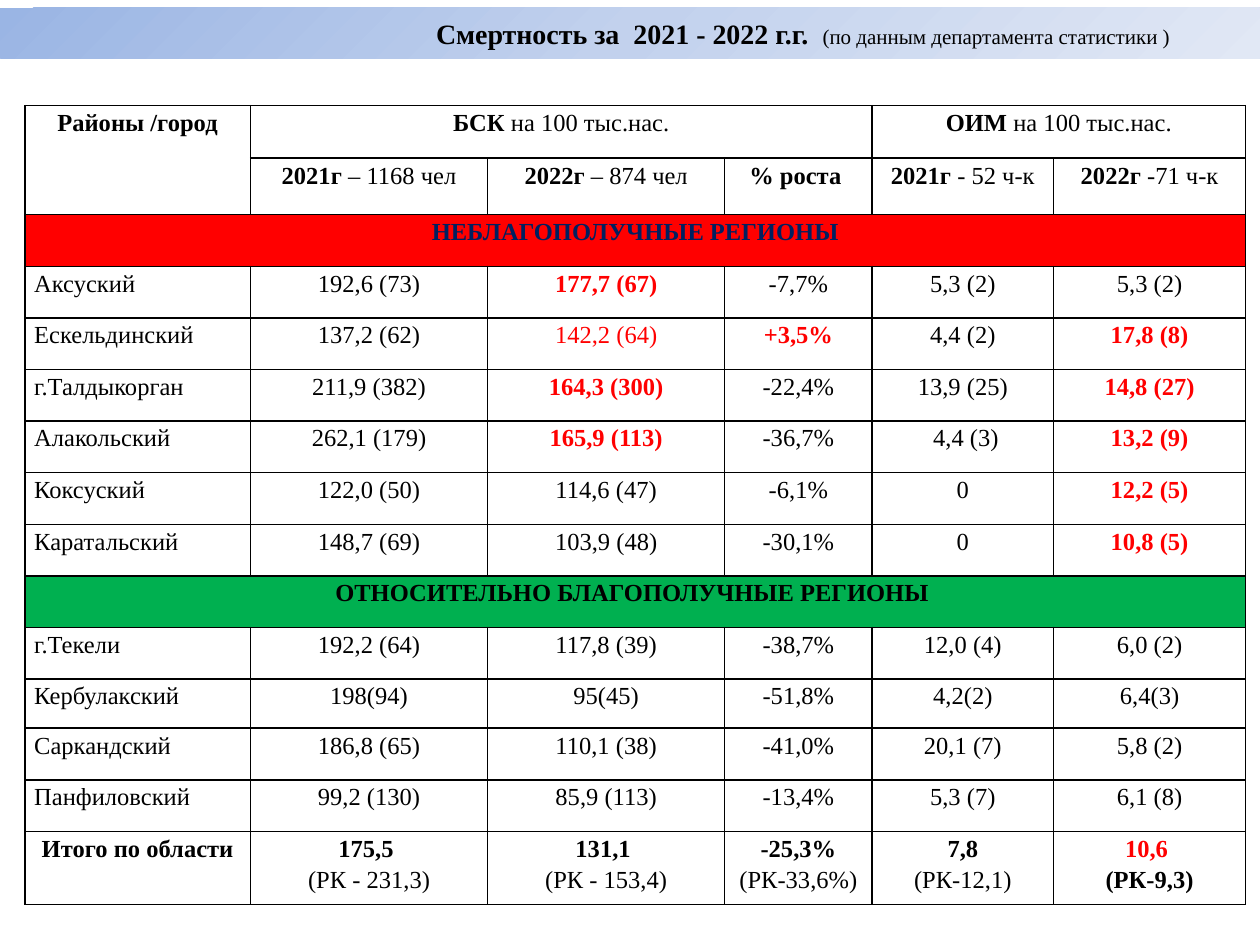
from copy import deepcopy

from lxml.etree import SubElement
from pptx import Presentation
from pptx.dml.color import RGBColor
from pptx.enum.text import MSO_ANCHOR as Anchor, MSO_AUTO_SIZE as AutoSize, PP_ALIGN as Align
from pptx.oxml.ns import qn
from pptx.util import Cm, Pt

BLACK = RGBColor(0x00, 0x00, 0x00)
RED = RGBColor(0xFF, 0x00, 0x00)
GREEN = RGBColor(0x00, 0xB0, 0x50)
NAVY = RGBColor(0x00, 0x20, 0x60)
BANNER = [RGBColor(0x9A, 0xB5, 0xE4), RGBColor(0xC2, 0xD1, 0xED), RGBColor(0xE1, 0xE8, 0xF5)]

COLUMNS = [4.55, 4.78, 4.78, 2.97, 3.66, 3.87]
ROW_HEIGHT = 1.04
SPECIAL_HEIGHTS = {0: 1.06, 1: 1.14, 11: 0.99, 14: 1.47}
MERGES = [(0, 0, 1, 0), (0, 1, 0, 3), (0, 4, 0, 5), (2, 0, 2, 5), (9, 0, 9, 5)]
BANDS = {2: (RED, NAVY), 9: (GREEN, BLACK)}
HEADER_ROWS = 2
TOTAL_ROW = 14

MORTALITY = [
    ["*Районы /город*", "*БСК *на 100 тыс.нас.", "", "", "*ОИМ *на 100 тыс.нас.", ""],
    ["", "*2021г *– 1168 чел", "*2022г *– 874 чел", "*% роста *", "*2021г *- 52 ч-к", "*2022г *-71 ч-к"],
    ["*НЕБЛАГОПОЛУЧНЫЕ РЕГИОНЫ*", "", "", "", "", ""],
    ["Аксуский", "192,6 (73)", "!*177,7 (67)*", "-7,7%", "5,3 (2)", "5,3 (2)"],
    ["Ескельдинский", "137,2 (62)", "!142,2 (64)", "!*+3,5%*", "4,4 (2)", "!*17,8 (8)*"],
    ["г.Талдыкорган", "211,9 (382)", "!*164,3 (300)*", "-22,4%", "13,9 (25)", "!*14,8 (27)*"],
    ["Алакольский", "262,1 (179)", "!*165,9 (113)*", "-36,7%", " 4,4 (3)", "!*13,2 (9)*"],
    ["Коксуский", "122,0 (50)", "114,6 (47)", "-6,1%", "0", "!*12,2 (5)*"],
    ["Каратальский", "148,7 (69)", "103,9 (48)", "-30,1%", "0", "!*10,8 (5)*"],
    ["*ОТНОСИТЕЛЬНО БЛАГОПОЛУЧНЫЕ РЕГИОНЫ *", "", "", "", "", ""],
    ["г.Текели", "192,2 (64)", "117,8 (39)", "-38,7%", "12,0 (4)", "6,0 (2)"],
    ["Кербулакский", "198(94)", "95(45)", "-51,8%", "4,2(2)", "6,4(3)"],
    ["Саркандский", "186,8 (65)", "110,1 (38)", "-41,0%", "20,1 (7)", "5,8 (2)"],
    ["Панфиловский", "99,2 (130)", "85,9 (113)", "-13,4%", "5,3 (7)", "6,1 (8)"],
    ["*Итого по области*", "*175,5 *\n(РК - 231,3)", "*131,1 *\n(РК - 153,4)", "*-25,3%*\n(РК-33,6%)",
     "*7,8*\n(РК-12,1)", "!*10,6 *\n*(РК-9,3)*"],
]


def add_text(paragraph, text, *, font="Times New Roman", size=14, color=BLACK, bold=False):
    """Append a formatted run to a paragraph."""
    run = paragraph.add_run()
    run.text = text
    run.font.name = font
    run.font.size = Pt(size)
    run.font.bold = bold
    run.font.color.rgb = color


class SlideBuilder:
    """Hold the table style and the current slide."""

    def __init__(self, slide, border_width=1):
        self.slide = slide
        self.border_width = border_width

    def add_title(self, heading, source):
        """Place the title on a gradient banner."""
        title = self.slide.shapes.title
        title.left, title.top, title.width, title.height = Cm(0), Cm(0.16), Cm(25.4), Cm(1.02)
        title.fill.gradient()
        title.fill.gradient_angle = 315
        first_stop = title.fill._fill._gradFill.gsLst[0]
        first_stop.addnext(deepcopy(first_stop))
        for stop, color, position in zip(title.fill.gradient_stops, BANNER, (0, 0.5, 1)):
            stop.color.rgb = color
            stop.position = position
        frame = title.text_frame
        frame.auto_size = AutoSize.NONE
        frame.word_wrap = True
        frame.vertical_anchor = Anchor.MIDDLE
        frame.margin_left = Cm(7.24)
        paragraph = frame.paragraphs[0]
        paragraph.alignment = Align.CENTER
        add_text(paragraph, heading, size=16, bold=True)
        add_text(paragraph, source, size=12)

    def add_table(self, rows):
        """Lay out the mortality table."""
        heights = [SPECIAL_HEIGHTS.get(i, ROW_HEIGHT) for i in range(len(rows))]
        table = self.slide.shapes.add_table(
            len(rows), len(COLUMNS), Cm(0.5), Cm(2.13), Cm(sum(COLUMNS)), Cm(sum(heights))).table
        table.first_row = table.horz_banding = False
        for column, width in zip(table.columns, COLUMNS):
            column.width = Cm(width)
        for row, height in zip(table.rows, heights):
            row.height = Cm(height)
        for top, left, bottom, right in MERGES:
            table.cell(top, left).merge(table.cell(bottom, right))
        for r, values in enumerate(rows):
            fill, color = BANDS.get(r, (None, BLACK))
            for c, value in enumerate(values):
                is_region = c == 0 and HEADER_ROWS <= r < TOTAL_ROW and r not in BANDS
                self.fill_cell(table.cell(r, c), value, fill=fill, color=color,
                               align=Align.LEFT if is_region else Align.CENTER,
                               margin=0.13 if r < HEADER_ROWS else 0.19)

    def fill_cell(self, cell, value, *, fill, color, align, margin):
        """Write a cell where asterisks enclose bold and a leading ! makes a line red."""
        cell.margin_left = cell.margin_right = Cm(margin)
        cell.margin_top = cell.margin_bottom = Cm(0)
        if fill is None:
            cell.fill.background()
        else:
            cell.fill.solid()
            cell.fill.fore_color.rgb = fill
        self.add_borders(cell)
        for i, line in enumerate(value.split("\n")):
            paragraph = cell.text_frame.add_paragraph() if i else cell.text_frame.paragraphs[0]
            paragraph.alignment = align
            paragraph.line_spacing = 1.15
            line_color = RED if line.startswith("!") else color
            for part, text in enumerate(line.lstrip("!").split("*")):
                if text:
                    add_text(paragraph, text, color=line_color, bold=part % 2 == 1)

    def add_borders(self, cell):
        """Draw a black line on each side of a cell."""
        properties = cell._tc.get_or_add_tcPr()
        for i, side in enumerate("LRTB"):
            line = SubElement(properties, qn(f"a:ln{side}"), w=str(Pt(self.border_width)))
            SubElement(SubElement(line, qn("a:solidFill")), qn("a:srgbClr"), val=str(BLACK))
            properties.insert(i, line)


def main():
    """Build the mortality slide."""
    deck = Presentation()
    deck.slide_width, deck.slide_height = Cm(25.4), Cm(19.05)
    builder = SlideBuilder(deck.slides.add_slide(deck.slide_layouts[5]))
    builder.add_title("Смертность за  2021 - 2022 г.г.  ", "(по данным департамента статистики )")
    builder.add_table(MORTALITY)
    deck.save("out.pptx")


if __name__ == "__main__":
    main()
